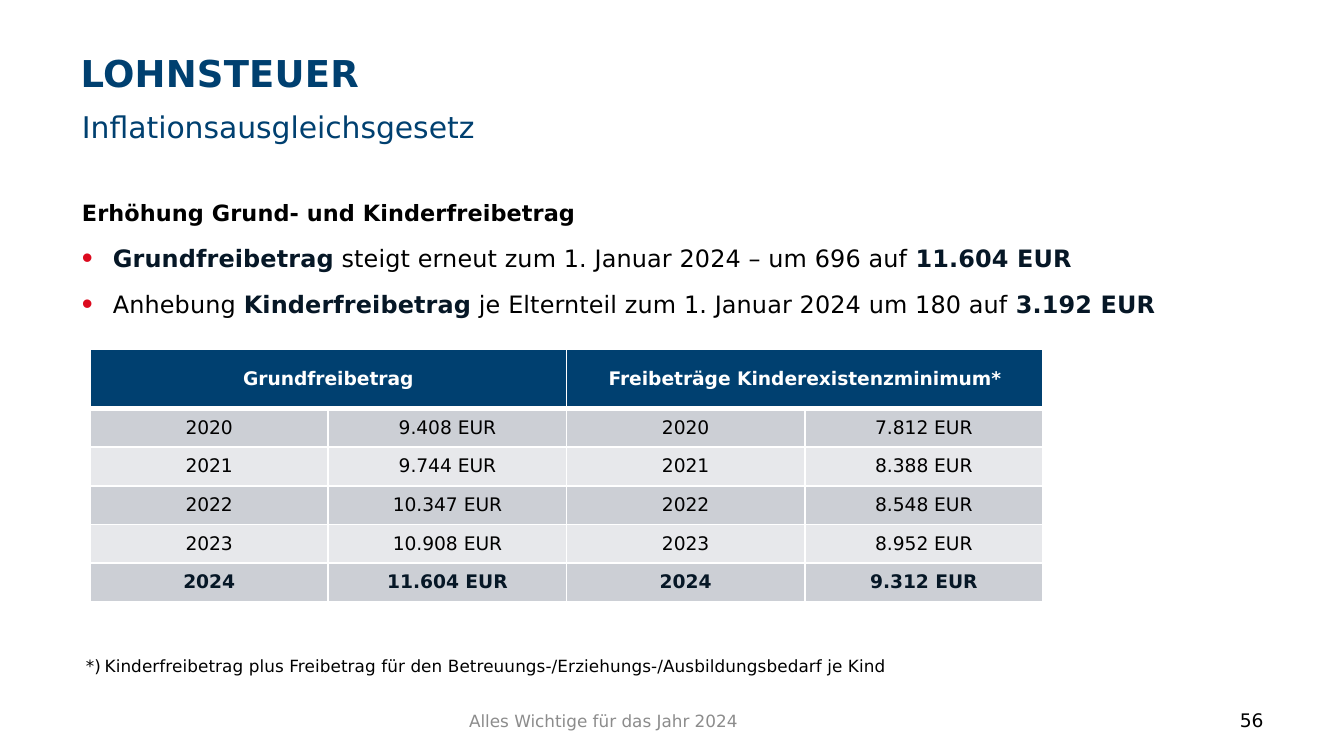
from lxml import etree
from pptx import Presentation
from pptx.dml.color import RGBColor
from pptx.enum.text import MSO_ANCHOR, MSO_AUTO_SIZE, PP_ALIGN
from pptx.oxml.ns import qn
from pptx.util import Inches, Pt

FONT = "DejaVu Sans"
NAVY = RGBColor(0x00, 0x40, 0x70)
DARK = RGBColor(0x06, 0x17, 0x26)
RED = RGBColor(0xDC, 0x0A, 0x1E)
BLACK = RGBColor(0x00, 0x00, 0x00)
WHITE = RGBColor(0xFF, 0xFF, 0xFF)
GREY = RGBColor(0x8C, 0x8C, 0x8C)
BAND_DARK = RGBColor(0xCC, 0xCF, 0xD5)
BAND_LIGHT = RGBColor(0xE7, 0xE8, 0xEB)
LEFT, CENTER, RIGHT = PP_ALIGN.LEFT, PP_ALIGN.CENTER, PP_ALIGN.RIGHT
TOP, MIDDLE = MSO_ANCHOR.TOP, MSO_ANCHOR.MIDDLE
FIXED, GROW = MSO_AUTO_SIZE.NONE, MSO_AUTO_SIZE.SHAPE_TO_FIT_TEXT

BULLETS = [
    [("Grundfreibetrag", True),
     (" steigt erneut zum 1. Januar 2024 – um 696 auf ", False),
     ("11.604 EUR", True)],
    [("Anhebung ", False),
     ("Kinderfreibetrag", True),
     (" je Elternteil zum 1. Januar 2024 um 180 auf ", False),
     ("3.192 EUR", True)],
]
ALLOWANCE_HEADS = ["Grundfreibetrag", "Freibeträge Kinderexistenzminimum*"]
ALLOWANCES = [
    ("2020", "9.408 EUR", "7.812 EUR"),
    ("2021", "9.744 EUR", "8.388 EUR"),
    ("2022", "10.347 EUR", "8.548 EUR"),
    ("2023", "10.908 EUR", "8.952 EUR"),
    ("2024", "11.604 EUR", "9.312 EUR"),
]


def add_xml(parent, tag, **attributes):
    return etree.SubElement(parent, qn(tag), attributes)


def add_run(paragraph, text, size, color, bold=False, spacing=None):
    run = paragraph.add_run()
    run.text = text
    run.font.name = FONT
    run.font.size = Pt(size)
    run.font.bold = bold
    run.font.color.rgb = color
    if spacing:
        run.font._element.set("spc", str(round(spacing * 100)))


def place(shape, box, anchor=TOP, fit=FIXED):
    """Move a text shape to its box and return its text frame."""
    shape.left, shape.top, shape.width, shape.height = map(Inches, box)
    frame = shape.text_frame
    frame.word_wrap = True
    frame.auto_size = fit
    frame.vertical_anchor = anchor
    return frame


def set_indent(paragraph, left=0.0, first=0.0, bullet=None):
    props = paragraph._p.get_or_add_pPr()
    props.set("marL", str(Inches(left)))
    props.set("indent", str(Inches(first)))
    if bullet:
        add_xml(add_xml(props, "a:buClr"), "a:srgbClr", val=str(RED))
        add_xml(props, "a:buSzPct", val="130000")
        add_xml(props, "a:buChar", char=bullet)
    else:
        add_xml(props, "a:buNone")


def fill_heading(title, subtitle, box):
    left, top, width, height = box
    paragraph = place(title, (left, top, width, height), MIDDLE).paragraphs[0]
    paragraph.alignment = LEFT
    add_run(paragraph, "LOHNSTEUER", 19.8, NAVY, True, 0.1)

    paragraph = place(subtitle, (left + 0.01, top + height, width, 0.28)).paragraphs[0]
    set_indent(paragraph)
    paragraph.space_before = Pt(0)
    add_run(paragraph, "Inflationsausgleichsgesetz", 16, NAVY)


def fill_body(body, box):
    frame = place(body, box)
    heading = frame.paragraphs[0]
    set_indent(heading)
    heading.line_spacing = Pt(16.5)
    heading.space_before = Pt(0)
    add_run(heading, "Erhöhung Grund- und Kinderfreibetrag", 12, BLACK, True, 0.07)
    for parts in BULLETS:
        item = frame.add_paragraph()
        item.level = 1
        set_indent(item, 0.23, -0.23, "•")
        item.line_spacing = Pt(15.8)
        item.space_before = Pt(9)
        for text, strong in parts:
            add_run(item, text, 12.8, DARK if strong else BLACK, strong, 0.05)


def style_cell(cell, fill, top=1, bottom=1):
    props = cell._tc.get_or_add_tcPr()
    for side, width in (("L", 1), ("R", 1), ("T", top), ("B", bottom)):
        line = add_xml(props, f"a:ln{side}", w=str(Pt(width)))
        add_xml(add_xml(line, "a:solidFill"), "a:srgbClr", val=str(WHITE))
    cell.fill.solid()
    cell.fill.fore_color.rgb = fill
    cell.vertical_anchor = MIDDLE
    cell.margin_left = cell.margin_right = Inches(0.08)
    cell.margin_top = cell.margin_bottom = Inches(0.04)


def write_cell(cell, text, color, bold):
    paragraph = cell.text_frame.paragraphs[0]
    paragraph.alignment = CENTER
    add_run(paragraph, text, 10, color, bold)


def add_allowance_table(slide, box):
    table = slide.shapes.add_table(len(ALLOWANCES) + 1, 4, *map(Inches, box)).table
    for column in table.columns:
        column.width = Inches(box[2] / 4)
    head_height = 0.44
    table.rows[0].height = Inches(head_height)

    # Header: one merged cell over each pair of columns
    for col in range(4):
        style_cell(table.cell(0, col), NAVY, bottom=3)
    for pair, head in enumerate(ALLOWANCE_HEADS):
        cell = table.cell(0, 2 * pair)
        cell.merge(table.cell(0, 2 * pair + 1))
        write_cell(cell, head, WHITE, True)

    # Years, with the latest one in bold
    for row, (year, basic, child) in enumerate(ALLOWANCES, start=1):
        table.rows[row].height = Inches((box[3] - head_height) / len(ALLOWANCES))
        latest = row == len(ALLOWANCES)
        for col, text in enumerate((year, basic, year, child)):
            cell = table.cell(row, col)
            style_cell(cell, BAND_DARK if row % 2 else BAND_LIGHT, top=3 if row == 1 else 1)
            write_cell(cell, text, DARK if latest else BLACK, latest)


def add_footnote(slide, box):
    note = slide.shapes.add_textbox(*map(Inches, box))
    paragraph = place(note, box, fit=GROW).paragraphs[0]
    tabs = add_xml(paragraph._p.get_or_add_pPr(), "a:tabLst")
    add_xml(tabs, "a:tab", pos=str(Inches(0.14)), algn="l")
    add_run(paragraph, "*)\tKinderfreibetrag plus Freibetrag für den "
            "Betreuungs-/Erziehungs-/Ausbildungsbedarf je Kind", 9, BLACK, spacing=0.07)


def add_footer(slide, box):
    left, top, width, height = box
    number_width = 2.33
    label_box = (left, top, 3.17, height)
    number_box = (left + width - number_width, top, number_width, height)

    label = slide.shapes.add_textbox(*map(Inches, label_box))
    frame = place(label, label_box, MIDDLE)
    frame.margin_left = frame.margin_right = Inches(0.07)
    frame.margin_top = frame.margin_bottom = Inches(0.04)
    add_run(frame.paragraphs[0], "Alles Wichtige für das Jahr 2024", 9, GREY)

    number = slide.shapes.add_textbox(*map(Inches, number_box))
    paragraph = place(number, number_box, MIDDLE).paragraphs[0]
    paragraph.alignment = RIGHT
    add_run(paragraph, "56", 10, BLACK)


def main():
    prs = Presentation()
    prs.slide_width = Inches(10)
    prs.slide_height = prs.slide_width * 9 // 16
    slide = prs.slides.add_slide(prs.slide_layouts[3])
    title, body, subtitle = slide.placeholders
    fill_heading(title, subtitle, (0.5, 0.32, 8.11, 0.44))
    fill_body(body, (0.51, 1.4, 8.43, 3.61))
    add_allowance_table(slide, (0.67, 2.6, 7.09, 1.88))
    add_footnote(slide, (0.54, 4.83, 7.68, 0.25))
    add_footer(slide, (3.42, 5.21, 6.08, 0.3))
    prs.save("out.pptx")


if __name__ == "__main__":
    main()
